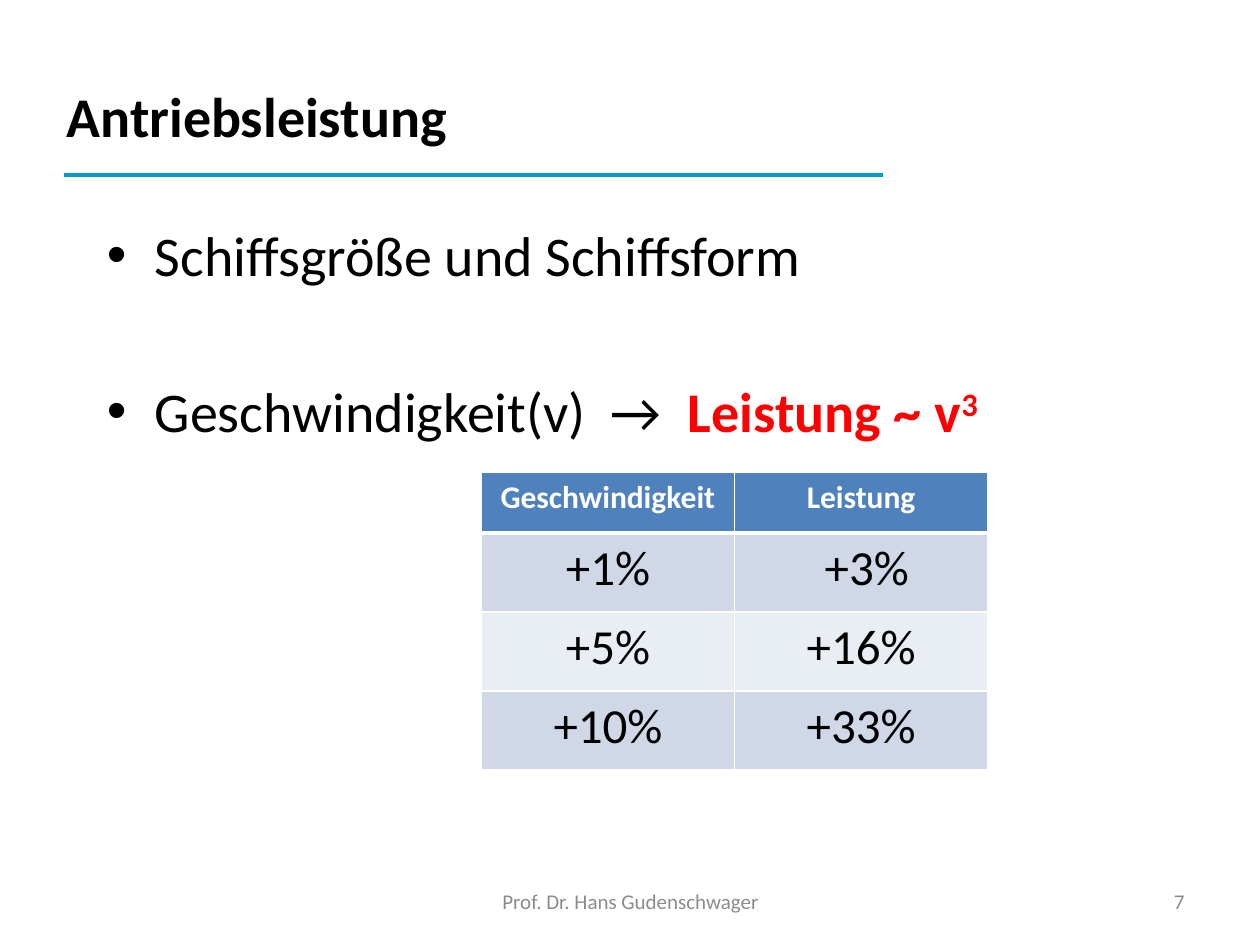
from lxml import etree
from pptx import Presentation
from pptx.dml.color import RGBColor
from pptx.enum.shapes import MSO_CONNECTOR
from pptx.enum.text import MSO_ANCHOR, PP_ALIGN
from pptx.oxml.ns import qn
from pptx.util import Inches, Pt

LEFT, MID, RIGHT = PP_ALIGN.LEFT, PP_ALIGN.CENTER, PP_ALIGN.RIGHT
TOP, CENTER = MSO_ANCHOR.TOP, MSO_ANCHOR.MIDDLE
STRAIGHT = MSO_CONNECTOR.STRAIGHT
HUES = {"rule": "0099CC", "text": "000000", "mark": "FF0000", "foot": "8C8C8C",
        "head": "4F81BD", "odd": "D0D8E8", "even": "E9EDF4", "white": "FFFFFF"}
BODY = {"size": Pt(32), "bold": False}
BOLD = {"size": Pt(32), "bold": True}
FOOT = {"size": Pt(12), "bold": False}
HEAD = {"size": Pt(18), "bold": True}
CELL = {"size": Pt(28), "bold": False}
ROWS = [("Geschwindigkeit", "Leistung"), ("+1%", " +3%"),
        ("+5%", "+16%"), ("+10%", "+33%")]


def rgb(hue):
    return RGBColor.from_string(HUES[hue])


def add_run(para, text, form, hue="text"):
    run = para.add_run()
    run.text = text
    font = run.font
    for name, value in {"name": "Calibri", **form}.items():
        setattr(font, name, value)
    font.color.rgb = rgb(hue)
    return run


def add_box(slide, x, y, w, h, anchor=TOP):
    frame = slide.shapes.add_textbox(
        Inches(x), Inches(y), Inches(w), Inches(h)).text_frame
    frame.word_wrap = True
    frame.vertical_anchor = anchor
    return frame


def add_label(slide, box, text, form, hue, align, anchor):
    """Add a box that holds one line of text."""
    para = add_box(slide, *box, anchor).paragraphs[0]
    para.alignment = align
    add_run(para, text, form, hue)


def add_title(slide, x, y, w, h):
    """Add the heading and the rule below it."""
    left, top = x + 0.08, y + 0.79
    rule = slide.shapes.add_connector(
        STRAIGHT, Inches(left), Inches(top), Inches(left + 6.5), Inches(top))
    rule.line.color.rgb = rgb("rule")
    rule.line.width = Pt(2.25)
    etree.SubElement(rule._element.spPr, qn("a:effectLst"))
    add_label(slide, (x, y, w, h), "Antriebsleistung", BOLD, "text", LEFT, TOP)


def set_bullet(para):
    props = para._p.get_or_add_pPr()
    props.set("marL", str(Inches(0.38)))
    props.set("indent", str(Inches(-0.38)))
    etree.SubElement(props, qn("a:buFont"), typeface="Arial")
    etree.SubElement(props, qn("a:buChar"), char="•")


def add_points(slide, x, y, w, h):
    frame = add_box(slide, x, y, w, h)
    size, speed = frame.paragraphs[0], frame.add_paragraph()
    speed.space_before = Pt(51)
    for para in (size, speed):
        set_bullet(para)
    add_run(size, "Schiffsgröße und Schiffsform", BODY)
    add_run(speed, "Geschwindigkeit(v)  →  ", BODY)
    add_run(speed, "Leistung ~ v", BOLD, "mark")
    power = add_run(speed, "3", BOLD, "mark")
    power.font._element.set("baseline", "30000")


def set_edges(cell, base):
    """Draw white cell borders, the lower one as wide as base points."""
    props = cell._tc.get_or_add_tcPr()
    for side, width in {"L": 1, "R": 1, "T": 1, "B": base}.items():
        line = etree.SubElement(props, qn("a:ln" + side), w=str(Pt(width)))
        fill = etree.SubElement(line, qn("a:solidFill"))
        etree.SubElement(fill, qn("a:srgbClr"), val=HUES["white"])


def add_grid(slide, x, y, w, h):
    """Add the table of speed against power."""
    head = 0.48
    table = slide.shapes.add_table(
        len(ROWS), 2, Inches(x), Inches(y), Inches(w), Inches(h)).table
    for col in table.columns:
        col.width = Inches(w / 2)
    for i, texts in enumerate(ROWS):
        top = i == 0
        table.rows[i].height = Inches(head if top else (h - head) / (len(ROWS) - 1))
        back = "head" if top else "odd" if i % 2 else "even"
        for j, text in enumerate(texts):
            cell = table.cell(i, j)
            set_edges(cell, 3 if top else 1)
            cell.fill.solid()
            cell.fill.fore_color.rgb = rgb(back)
            para = cell.text_frame.paragraphs[0]
            para.alignment = MID
            add_run(para, text, HEAD if top else CELL, "white" if top else "text")


def add_footer(slide, x, y, w, h):
    for box, text, align in [((x, y, 3.17, h), "Prof. Dr. Hans Gudenschwager", MID),
                             ((x + w - 2.33, y, 2.33, h), "7", RIGHT)]:
        add_label(slide, box, text, FOOT, "foot", align, CENTER)


def main():
    deck = Presentation()
    deck.slide_width, deck.slide_height = Inches(10), Inches(7.5)
    slide = deck.slides.add_slide(deck.slide_layouts[6])
    add_title(slide, 0.43, 0.6, 6.85, 0.71)
    add_points(slide, 0.75, 1.7, 8.74, 4.88)
    add_grid(slide, 3.82, 3.75, 4.02, 2.36)
    add_footer(slide, 3.42, 6.95, 6.08, 0.4)
    deck.save("out.pptx")


if __name__ == "__main__":
    main()
